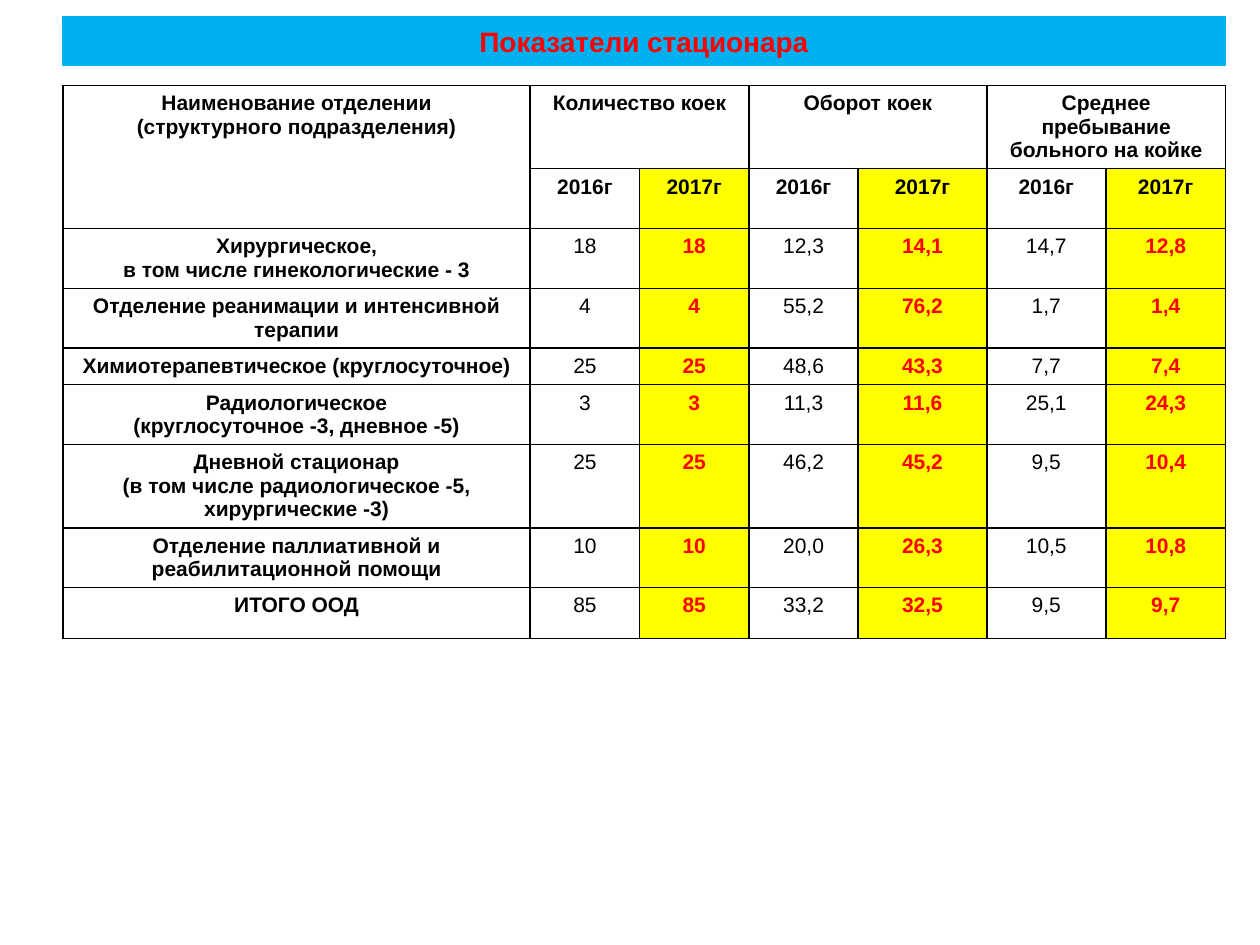
from lxml import etree
from pptx import Presentation
from pptx.dml.color import RGBColor
from pptx.enum.text import MSO_ANCHOR, PP_ALIGN
from pptx.oxml.ns import qn
from pptx.util import Pt

COLORS = {"banner": "00B0F0", "accent": "FF0000", "text": "000000", "highlight": "FFFF00"}
FONT = "Arial"


def format_text(frame, size, color, bold=True):
    for paragraph in frame.paragraphs:
        paragraph.alignment = PP_ALIGN.CENTER
        paragraph.font.name = FONT
        paragraph.font.size = Pt(size)
        paragraph.font.bold = bold
        paragraph.font.color.rgb = RGBColor.from_string(COLORS[color])


def add_borders(cell):
    properties = cell._tc.get_or_add_tcPr()
    for side in ("a:lnL", "a:lnR", "a:lnT", "a:lnB"):
        line = etree.SubElement(properties, qn(side), w=str(Pt(1)))
        fill = etree.SubElement(line, qn("a:solidFill"))
        etree.SubElement(fill, qn("a:srgbClr"), val=COLORS["text"])


prs = Presentation()
prs.slide_width, prs.slide_height = Pt(720), Pt(540)
slide = prs.slides.add_slide(prs.slide_layouts[5])

# Title banner
title = slide.shapes.title
title.left, title.top, title.width, title.height = Pt(36), Pt(9.4), Pt(664), Pt(28)
title.fill.solid()
title.fill.fore_color.rgb = RGBColor.from_string(COLORS["banner"])
title.line.color.rgb = RGBColor.from_string(COLORS["banner"])
title.line.width = Pt(0.75)
title.text_frame.text = "Показатели стационара"
title.text_frame.vertical_anchor = MSO_ANCHOR.MIDDLE
format_text(title.text_frame, 16, "accent")

# Table content
rows = [
    ["Наименование отделении\n(структурного подразделения)", "Количество коек", "",
     "Оборот коек", "", "Среднее пребывание больного на койке", ""],
    [""] + ["2016г", "2017г"] * 3,
    ["Хирургическое,\nв том числе гинекологические - 3",
     "18", "18", "12,3", "14,1", "14,7", "12,8"],
    ["Отделение реанимации и интенсивной терапии",
     "4", "4", "55,2", "76,2", "1,7", "1,4"],
    ["Химиотерапевтическое (круглосуточное)",
     "25", "25", "48,6", "43,3", "7,7", "7,4"],
    ["Радиологическое\n(круглосуточное -3, дневное -5)",
     "3", "3", "11,3", "11,6", "25,1", "24,3"],
    ["Дневной стационар\n(в том числе радиологическое -5, хирургические -3)",
     "25", "25", "46,2", "45,2", "9,5", "10,4"],
    ["Отделение паллиативной и реабилитационной помощи",
     "10", "10", "20,0", "26,3", "10,5", "10,8"],
    ["ИТОГО ООД", "85", "85", "33,2", "32,5", "9,5", "9,7"],
]
column_widths = [267, 62.5, 62.5, 62.5, 73.5, 68, 68.5]
row_heights = [47.5, 34.2, 34.2, 34, 21, 34, 47.7, 34, 29.2]

# Table grid
indicators = slide.shapes.add_table(
    len(rows), len(column_widths), Pt(36), Pt(48.8),
    Pt(sum(column_widths)), Pt(sum(row_heights))).table
indicators.first_row = indicators.horz_banding = False
for column, width in zip(indicators.columns, column_widths):
    column.width = Pt(width)
for row, height in zip(indicators.rows, row_heights):
    row.height = Pt(height)

# Cells: the 2017 columns are highlighted below the group headings
for r, values in enumerate(rows):
    for c, value in enumerate(values):
        cell = indicators.cell(r, c)
        is_2017 = r > 0 and c in (2, 4, 6)
        is_data = r > 1 and c > 0
        cell.text = value
        format_text(cell.text_frame, 12, "accent" if is_data and is_2017 else "text",
                    bold=is_2017 or not is_data)
        add_borders(cell)
        if is_2017:
            cell.fill.solid()
            cell.fill.fore_color.rgb = RGBColor.from_string(COLORS["highlight"])
        else:
            cell.fill.background()

# Merged headings
indicators.cell(0, 0).merge(indicators.cell(1, 0))
for c in (1, 3, 5):
    indicators.cell(0, c).merge(indicators.cell(0, c + 1))

prs.save("out.pptx")
